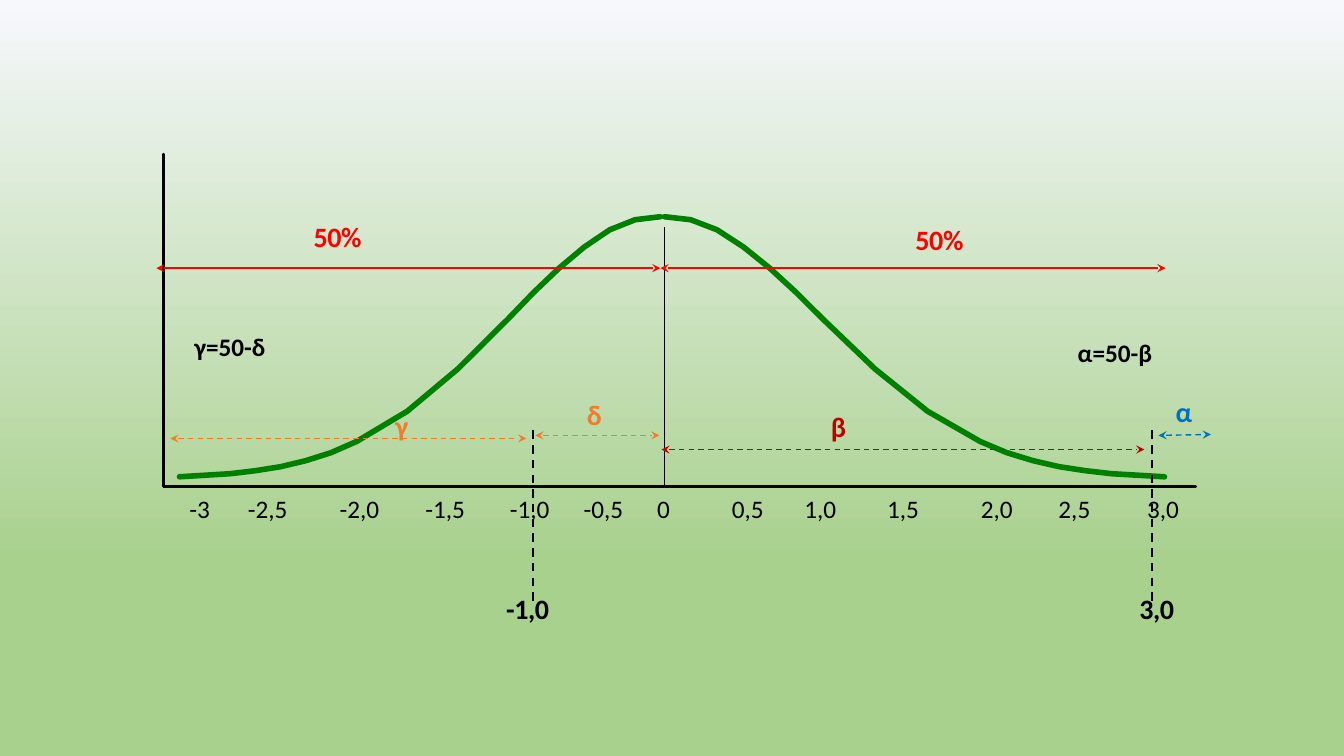
import lxml.etree
import pptx
import pptx.dml.color
import pptx.enum.dml
import pptx.enum.shapes
import pptx.enum.text
import pptx.oxml.ns
import pptx.util

Inches = pptx.util.Inches
Pt = pptx.util.Pt
RGBColor = pptx.dml.color.RGBColor
qn = pptx.oxml.ns.qn

BLACK = RGBColor(0x00, 0x00, 0x00)
RED = RGBColor(0xFF, 0x00, 0x00)
DARK_RED = RGBColor(0xC0, 0x00, 0x00)
ORANGE = RGBColor(0xED, 0x7D, 0x31)
BLUE = RGBColor(0x00, 0x70, 0xC0)
CURVE_GREEN = RGBColor(0x00, 0x80, 0x00)
PALE_SKY = RGBColor(0xF6, 0xF8, 0xFC)
MEADOW = RGBColor(0xA9, 0xD1, 0x8E)

presentation = pptx.Presentation()
presentation.slide_width = Inches(13.33)
presentation.slide_height = Inches(7.5)
slide = presentation.slides.add_slide(presentation.slide_layouts[6])

backdrop = slide.background.fill
backdrop.gradient()
backdrop.gradient_angle = 270
for stop, position, color in zip(backdrop.gradient_stops, (0, 0.74), (PALE_SKY, MEADOW)):
    stop.position = position
    stop.color.rgb = color


def add_text(text, left, top, width, height, *, size=18, color=BLACK, bold=False,
             tight=False, spacing=0, align=None, tabs=()):
    """Add a one-line label; tight drops the insets, tabs are inches from the text edge."""
    label = slide.shapes.add_textbox(Inches(left), Inches(top), Inches(width), Inches(height))
    frame = label.text_frame
    frame.word_wrap = True
    frame.auto_size = pptx.enum.text.MSO_AUTO_SIZE.SHAPE_TO_FIT_TEXT
    paragraph = frame.paragraphs[0]
    paragraph.alignment = align
    properties = paragraph._p.get_or_add_pPr()
    if tight:
        frame.margin_left = frame.margin_right = frame.margin_bottom = 0
        frame.margin_top = Inches(0.01)
        paragraph.space_before = Pt(0.9)
        properties.set("marL", str(Inches(0.01)))
    if tabs:
        tab_list = lxml.etree.SubElement(properties, qn("a:tabLst"))
        for tab in tabs:
            lxml.etree.SubElement(tab_list, qn("a:tab"), pos=str(Inches(tab)), algn="l")
    run = paragraph.add_run()
    run.text = text
    run.font.name = "Calibri"
    run.font.size = Pt(size)
    run.font.bold = bold
    run.font.color.rgb = color
    if spacing:
        run._r.get_or_add_rPr().set("spc", str(round(spacing * 100)))


def add_outline(points, color, width):
    """Draw an open, unfilled line through points given in inches."""
    corners = [(Inches(x), Inches(y)) for x, y in points]
    builder = slide.shapes.build_freeform(*corners[0])
    builder.add_line_segments(corners[1:], close=False)
    outline = builder.convert_to_shape()
    outline.shadow.inherit = False
    outline.fill.background()
    outline.line.color.rgb = color
    outline.line.width = Pt(width)
    line_properties = outline.line._get_or_add_ln()
    line_properties.set("cap", "rnd")
    lxml.etree.SubElement(line_properties, qn("a:round"))


# Axis numbers
add_text("-3\t-2,5\t-2,0\t-1,5\t-1,0\t-0,5\t0", 1.78, 4.84, 5.4, 0.4,
         tabs=(0.58, 1.49, 2.34, 3.18, 3.91, 4.64))
add_text("0,5\t1,0\t1,5\t2,0\t2,5\t3,0", 7.16, 4.84, 4.93, 0.4,
         tabs=(0.72, 1.54, 2.47, 3.24, 4.12))

# Axes and the two halves of the bell curve
add_outline([(1.62, 1.53), (1.62, 4.83), (11.86, 4.83)], BLACK, 2)
curve_steps = (19, 17, 16, 15, 14, 13, 12, 10, 8, 6, 5, 4, 3, 2, 1, 0)
curve_heights = (4.73, 4.7, 4.67, 4.63, 4.57, 4.49, 4.38, 4.08,
                 3.66, 3.16, 2.9, 2.66, 2.45, 2.28, 2.18, 2.15)
for peak, half_width in ((6.59, 4.96), (6.55, -4.77)):
    add_outline([(peak + half_width * step / 19, y)
                 for step, y in zip(curve_steps, curve_heights)], CURVE_GREEN, 4)

# Start x, start y, end x, end y, colour, width, dashed, arrowheads
rules_and_spans = [
    (6.59, 2.25, 6.59, 4.84, BLACK, 1, False, False),
    (5.29, 4.27, 5.29, 6, BLACK, 1.5, True, False),
    (11.43, 4.27, 11.43, 6, BLACK, 1.5, True, False),
    (6.55, 2.66, 11.56, 2.66, RED, 1, False, True),
    (1.55, 2.66, 6.55, 2.66, RED, 1, False, True),
    (6.56, 4.46, 11.35, 4.46, DARK_RED, 1, True, True),
    (5.31, 4.32, 6.54, 4.32, ORANGE, 1, True, True),
    (1.69, 4.35, 5.22, 4.35, ORANGE, 1, True, True),
    (11.49, 4.32, 12.01, 4.31, BLUE, 1, True, True),
]
for x1, y1, x2, y2, color, width, dashed, arrowed in rules_and_spans:
    span = slide.shapes.add_connector(
        pptx.enum.shapes.MSO_CONNECTOR.STRAIGHT,
        Inches(x1), Inches(y1), Inches(x2), Inches(y2))
    span.line.color.rgb = color
    span.line.width = Pt(width)
    if dashed:
        span.line.dash_style = pptx.enum.dml.MSO_LINE.DASH
    if arrowed:
        for end in ("a:headEnd", "a:tailEnd"):
            lxml.etree.SubElement(span.line._get_or_add_ln(), qn(end), type="stealth")
    lxml.etree.SubElement(span._element.spPr, qn("a:effectLst"))

# Area letters, shares and marked values
for letter, left, top, color in (("δ", 5.81, 3.93, ORANGE), ("α", 11.65, 3.9, BLUE),
                                 ("β", 8.23, 4.05, DARK_RED), ("γ", 3.91, 4.04, ORANGE)):
    add_text(letter, left, top, 0.28, 0.35, size=20, color=color, bold=True,
             tight=True, spacing=-0.2)
for value, left, top, width, color in (("50%", 9.07, 2.2, 0.73, RED),
                                       ("50%", 3.1, 2.17, 0.73, RED),
                                       ("3,0", 11.29, 5.86, 0.55, BLACK),
                                       ("-1,0", 5.01, 5.86, 0.55, BLACK)):
    add_text(value, left, top, width, 0.36, size=20, color=color, bold=True,
             tight=True, spacing=-0.3)
for formula, left, top in (("α=50-β", 10.59, 3.3), ("γ=50-δ", 1.83, 3.24)):
    add_text(formula, left, top, 1.02, 0.4, bold=True,
             align=pptx.enum.text.PP_ALIGN.JUSTIFY)

presentation.save("out.pptx")
